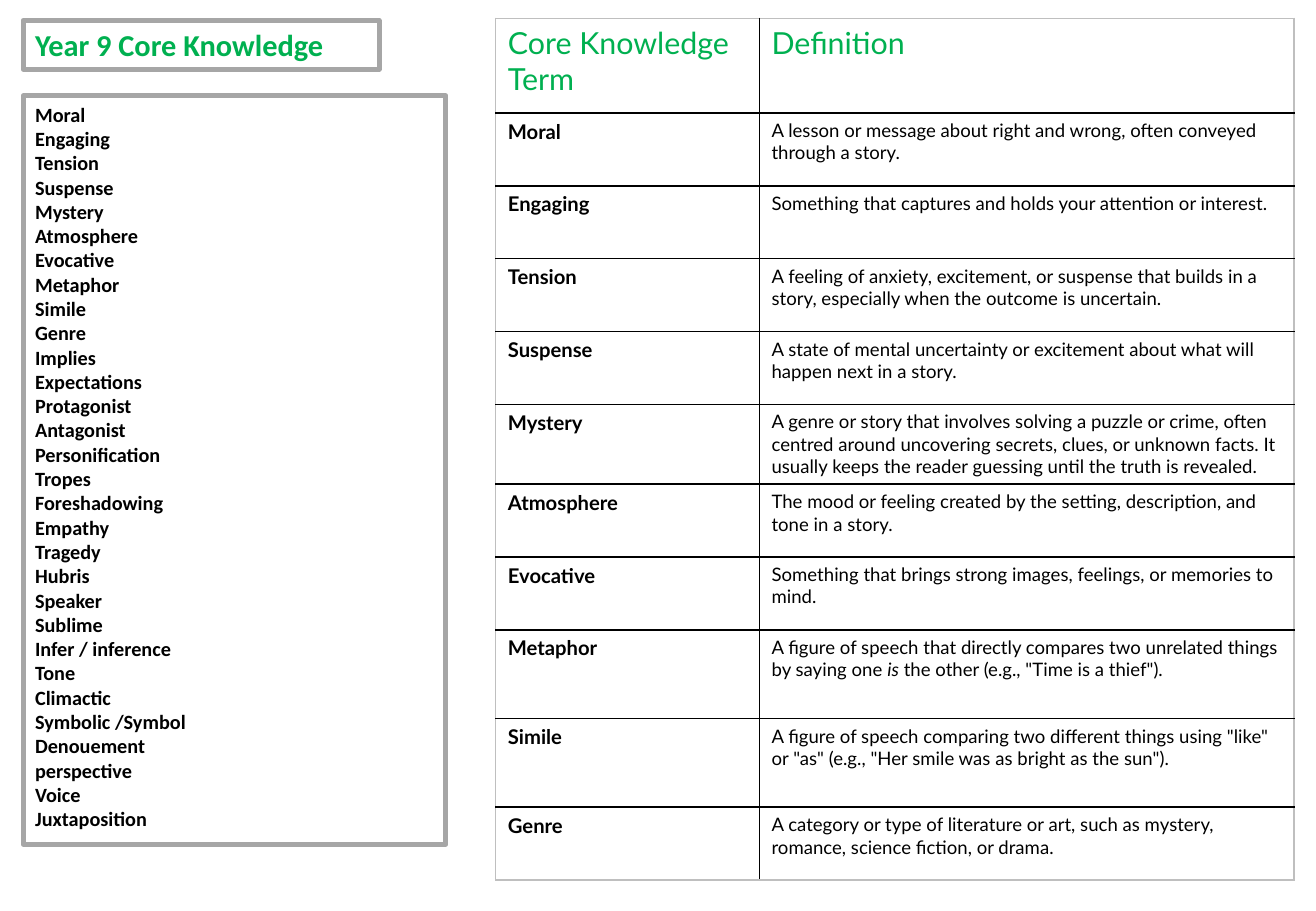
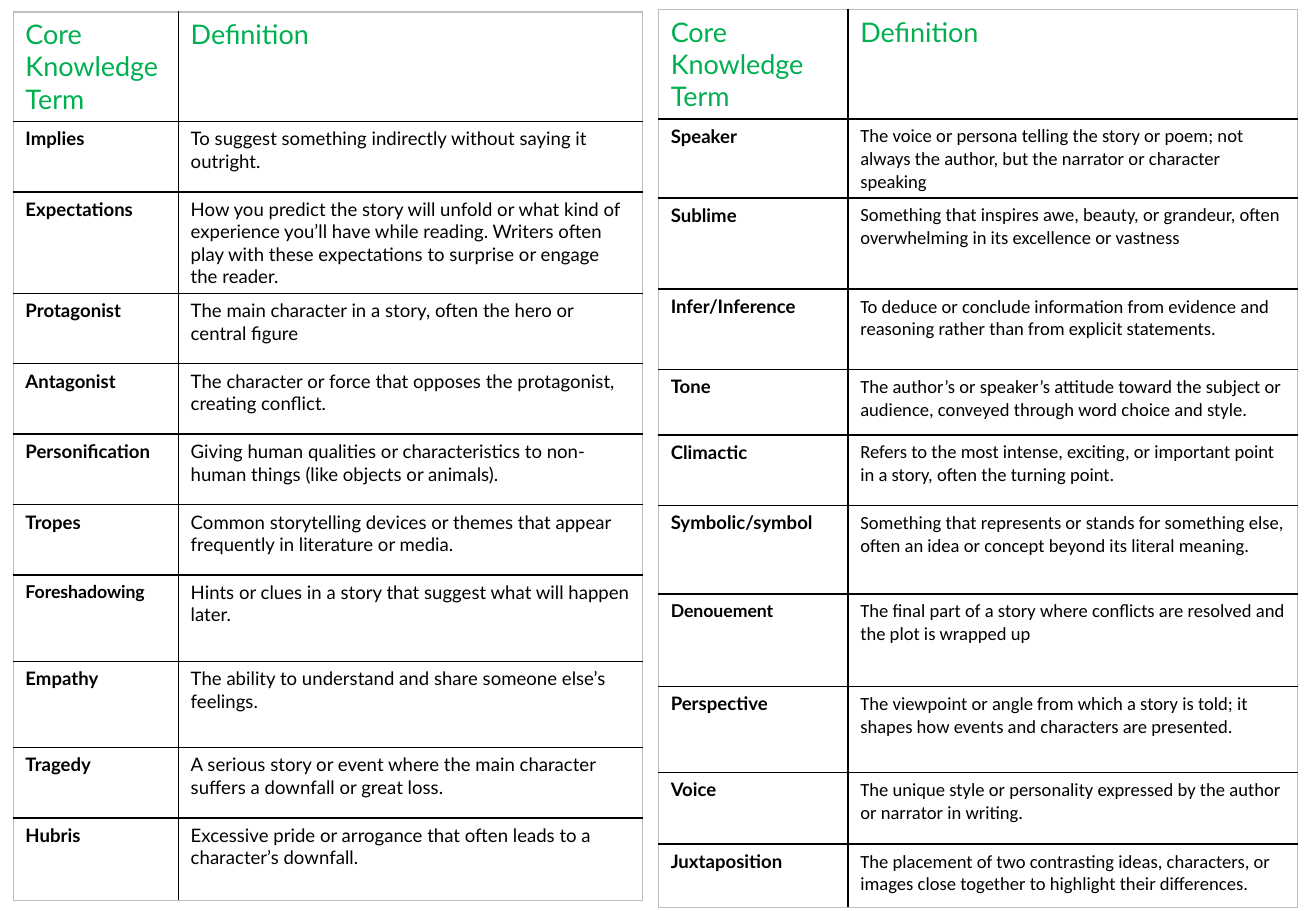
from dataclasses import dataclass

from lxml.etree import SubElement
from pptx import Presentation
from pptx.dml.color import RGBColor
from pptx.enum.shapes import MSO_SHAPE
from pptx.enum.text import MSO_ANCHOR, MSO_AUTO_SIZE, PP_ALIGN
from pptx.oxml.ns import qn
from pptx.util import Inches, Pt


@dataclass(frozen=True)
class Theme:
    heading: str = "00B050"
    ink: str = "000000"
    frame: str = "A6A6A6"
    outer_border: str = "BFBFBF"
    table_font: str = "Lato"
    box_font: str = "Calibri"
    title_size: float = 18
    list_size: float = 12
    definition_size: float = 11
    long_term_size: float = 10.5
    frame_width: float = 3
    border_width: float = 1


HEADINGS = ("Core Knowledge Term", "Definition")

WORD_LIST = [
    "Moral", "Engaging", "Tension", "Suspense", "Mystery", "Atmosphere",
    "Evocative", "Metaphor", "Simile", "Genre", "Implies", "Expectations",
    "Protagonist", "Antagonist", "Personification", "Tropes",
    "Foreshadowing", "Empathy", "Tragedy", "Hubris", "Speaker", "Sublime",
    "Infer / inference", "Tone", "Climactic", "Symbolic /Symbol",
    "Denouement", "perspective", "Voice", "Juxtaposition",
]

STORY_TERMS = [
    ("Moral", "A lesson or message about right and wrong, often conveyed through a story."),
    ("Engaging", "Something that captures and holds your attention or interest."),
    ("Tension", "A feeling of anxiety, excitement, or suspense that builds in a story, "
                "especially when the outcome is uncertain."),
    ("Suspense", "A state of mental uncertainty or excitement about what will happen next "
                 "in a story."),
    ("Mystery", "A genre or story that involves solving a puzzle or crime, often centred "
                "around uncovering secrets, clues, or unknown facts. It usually keeps the "
                "reader guessing until the truth is revealed."),
    ("Atmosphere", "The mood or feeling created by the setting, description, and tone in a story."),
    ("Evocative", "Something that brings strong images, feelings, or memories to mind."),
    ("Metaphor", "A figure of speech that directly compares two unrelated things by saying "
                 "one *is* the other (e.g., \"Time is a thief\")."),
    ("Simile", "A figure of speech comparing two different things using \"like\" or \"as\" "
               "(e.g., \"Her smile was as bright as the sun\")."),
    ("Genre", "A category or type of literature or art, such as mystery, romance, science "
              "fiction, or drama."),
]

CHARACTER_TERMS = [
    ("Implies", "To suggest something indirectly without saying it outright."),
    ("Expectations", "How you predict the story will unfold or what kind of experience "
                     "you’ll have while reading. Writers often play with these expectations "
                     "to surprise or engage the reader."),
    ("Protagonist", "The main character in a story, often the hero or central figure"),
    ("Antagonist", "The character or force that opposes the protagonist, creating conflict."),
    ("Personification", "Giving human qualities or characteristics to non-human things "
                        "(like objects or animals)."),
    ("Tropes", "Common storytelling devices or themes that appear frequently in literature "
               "or media."),
    ("Foreshadowing", "Hints or clues in a story that suggest what will happen later."),
    ("Empathy", "The ability to understand and share someone else’s feelings."),
    ("Tragedy", "A serious story or event where the main character suffers a downfall or "
                "great loss."),
    ("Hubris", "Excessive pride or arrogance that often leads to a character’s downfall."),
]

VOICE_TERMS = [
    ("Speaker", "The voice or persona telling the story or poem; not always the author, but "
                "the narrator or character speaking"),
    ("Sublime", "Something that inspires awe, beauty, or grandeur, often overwhelming in its "
                "excellence or vastness"),
    ("Infer/Inference", "To deduce or conclude information from evidence and reasoning rather "
                        "than from explicit statements."),
    ("Tone", "The author’s or speaker’s attitude toward the subject or audience, conveyed "
             "through word choice and style."),
    ("Climactic", "Refers to the most intense, exciting, or important point in a story, often "
                  "the turning point."),
    ("Symbolic/symbol", "Something that represents or stands for something else, often an idea "
                        "or concept beyond its literal meaning."),
    ("Denouement", "The final part of a story where conflicts are resolved and the plot is "
                   "wrapped up"),
    ("Perspective", "The viewpoint or angle from which a story is told; it shapes how events "
                    "and characters are presented."),
    ("Voice", "The unique style or personality expressed by the author or narrator in writing."),
    ("Juxtaposition", "The placement of two contrasting ideas, characters, or images close "
                      "together to highlight their differences."),
]


class KnowledgeDeck:
    def __init__(self, theme):
        self.theme = theme
        self.presentation = Presentation()
        self.presentation.slide_width = Inches(10.83)
        self.presentation.slide_height = Inches(7.5)
        self.slide = None

    def add_slide(self):
        self.slide = self.presentation.slides.add_slide(self.presentation.slide_layouts[6])

    def format_run(self, run, size, font, color, bold=False, italic=False):
        run.font.size = Pt(size)
        run.font.name = font
        run.font.color.rgb = RGBColor.from_string(color)
        run.font.bold = bold
        run.font.italic = italic

    def add_framed_box(self, left, top, width, height, lines, size, color):
        shape = self.slide.shapes.add_shape(
            MSO_SHAPE.RECTANGLE, Inches(left), Inches(top), Inches(width), Inches(height))
        shape.shadow.inherit = False
        shape.fill.background()
        shape.line.color.rgb = RGBColor.from_string(self.theme.frame)
        shape.line.width = Pt(self.theme.frame_width)
        text_frame = shape.text_frame
        text_frame.word_wrap = True
        text_frame.auto_size = MSO_AUTO_SIZE.SHAPE_TO_FIT_TEXT
        text_frame.vertical_anchor = MSO_ANCHOR.TOP
        text_frame.text = "\n".join(lines)
        for paragraph in text_frame.paragraphs:
            paragraph.alignment = PP_ALIGN.LEFT
            for run in paragraph.runs:
                self.format_run(run, size, self.theme.box_font, color, bold=True)

    def set_borders(self, cell, outer_sides):
        properties = cell._tc.get_or_add_tcPr()
        for side in ("L", "R", "T", "B"):
            color = self.theme.outer_border if side in outer_sides else self.theme.ink
            line = SubElement(properties, qn(f"a:ln{side}"),
                              w=str(Pt(self.theme.border_width)))
            fill = SubElement(line, qn("a:solidFill"))
            SubElement(fill, qn("a:srgbClr"), val=color)

    def fill_cell(self, cell, text, size, font, color, bold=False):
        paragraph = cell.text_frame.paragraphs[0]
        for index, part in enumerate(text.split("*")):
            run = paragraph.add_run()
            run.text = part
            self.format_run(run, size, font, color, bold, italic=index % 2 == 1)

    def add_glossary(self, left, top, column_widths, row_heights, entries,
                     heading_size, term_size, definition_font, long_term=None):
        theme = self.theme
        rows = [HEADINGS, *entries]
        table = self.slide.shapes.add_table(
            len(rows), len(HEADINGS), Inches(left), Inches(top),
            Inches(sum(column_widths)), Inches(sum(row_heights))).table
        table.first_row = False
        table.horz_banding = False
        for column, width in zip(table.columns, column_widths):
            column.width = Inches(width)
        for row, height in zip(table.rows, row_heights):
            row.height = Inches(height)
        for index, (term, definition) in enumerate(rows):
            term_cell, definition_cell = table.cell(index, 0), table.cell(index, 1)
            edge = "T" if index == 0 else "B" if index == len(rows) - 1 else ""
            for cell, side in ((term_cell, "L"), (definition_cell, "R")):
                self.set_borders(cell, side + edge)
                cell.fill.background()
            if index == 0:
                for cell, text in ((term_cell, term), (definition_cell, definition)):
                    self.fill_cell(cell, text, heading_size, theme.table_font, theme.heading)
            else:
                size = theme.long_term_size if term == long_term else term_size
                self.fill_cell(term_cell, term, size, theme.table_font, theme.ink, bold=True)
                self.fill_cell(definition_cell, definition, theme.definition_size,
                               definition_font, theme.ink)


def main():
    theme = Theme()
    deck = KnowledgeDeck(theme)

    deck.add_slide()
    deck.add_glossary(4.08, 0.15, [2.17, 4.4],
                      [0.78] + [0.6] * 7 + [0.73] * 2 + [0.6],
                      STORY_TERMS, 18, 12, theme.table_font)
    deck.add_framed_box(0.19, 0.17, 2.93, 0.4, ["Year 9 Core Knowledge"],
                        theme.title_size, theme.heading)
    deck.add_framed_box(0.19, 0.79, 3.48, 6.16, WORD_LIST, theme.list_size, theme.ink)

    deck.add_slide()
    deck.add_glossary(0.11, 0.1, [1.36, 3.82],
                      [0.88, 0.58, 0.81] + [0.58] * 4 + [0.71] * 2 + [0.58, 0.68],
                      CHARACTER_TERMS, 16, 11, theme.table_font, "Foreshadowing")
    deck.add_glossary(5.42, 0.08, [1.56, 3.7],
                      [0.84, 0.52, 0.75, 0.66, 0.54, 0.58, 0.73, 0.76, 0.71, 0.59, 0.52],
                      VOICE_TERMS, 16, 11, theme.box_font, "Denouement")

    deck.presentation.save("out.pptx")


if __name__ == "__main__":
    main()
